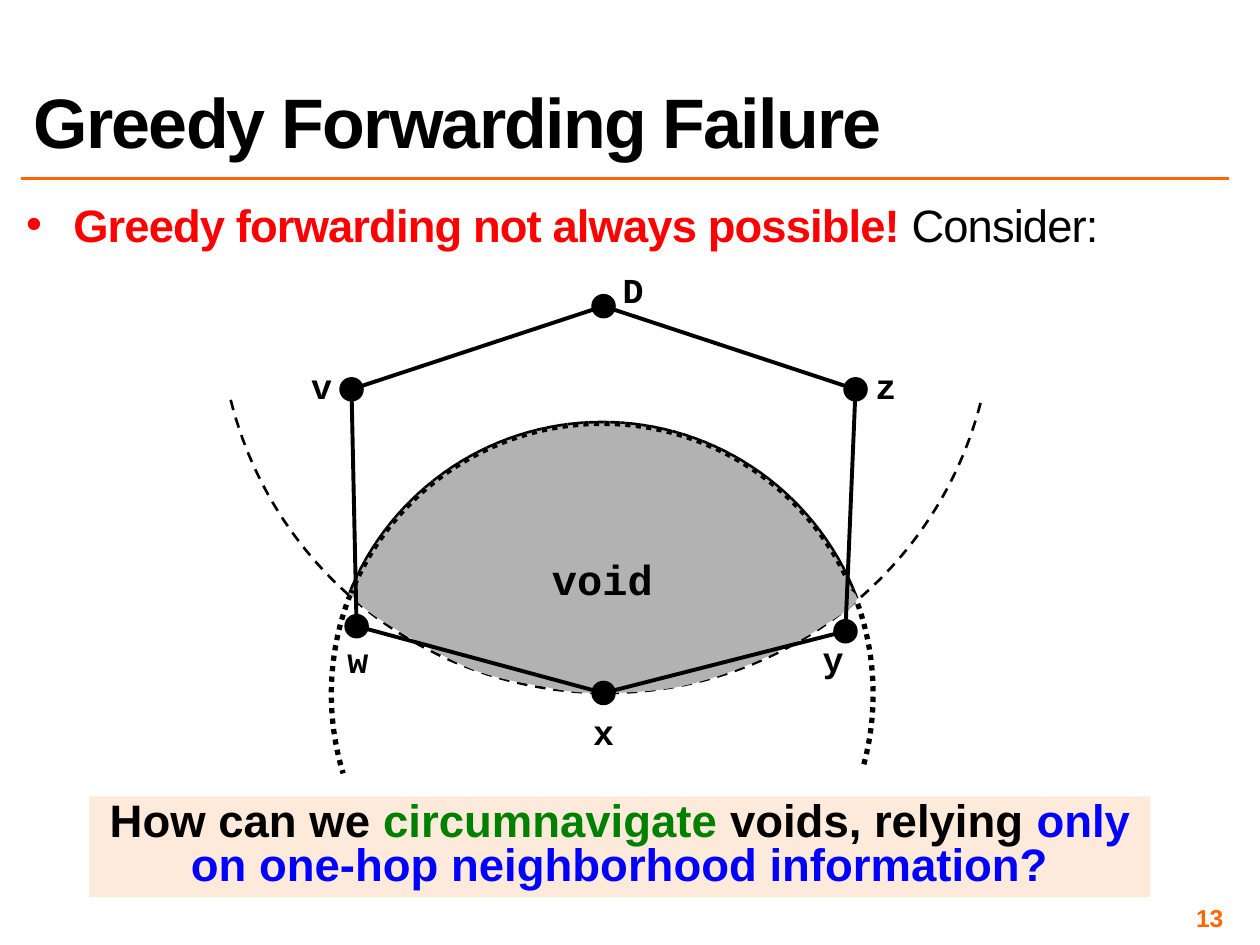
from math import cos, radians, sin, tan

from lxml.etree import SubElement
from pptx import Presentation
from pptx.dml.color import RGBColor
from pptx.enum.dml import MSO_LINE
from pptx.enum.shapes import MSO_CONNECTOR, MSO_SHAPE
from pptx.enum.text import MSO_ANCHOR, MSO_AUTO_SIZE, PP_ALIGN
from pptx.oxml.ns import qn
from pptx.util import Inches, Pt

COLORS = {"ink": "000000", "accent": "FF6600", "alert": "FF0000", "void": "B2B2B2",
          "panel": "FDEADA", "green": "008000", "blue": "0000FF"}

WIDTH, HEIGHT = 10, 7.5
MARGIN = WIDTH / 60
RIGHT_EDGE = WIDTH - 0.25
RULE_TOP = 17 / 12
NODE_SIZE = MARGIN

TITLE = [("Greedy Forwarding Failure", "ink", True)]
CLAIM = [("Greedy forwarding not always possible! ", "alert", True), ("Consider:", "ink", False)]
QUESTION = [("How can we ", "ink", True), ("circumnavigate", "green", True),
            (" voids, relying ", "ink", True),
            ("only on one-hop neighborhood information?", "blue", True)]
PAGE = [("13", "accent", True)]

NODES = {
    "D": ((4.79, 2.43), (4.83, 2.08, 0.39)),
    "v": ((2.79, 3.09), (2.37, 2.84, 0.35)),
    "z": ((6.79, 3.09), (6.85, 2.84, 0.33)),
    "w": ((2.83, 4.97), (2.63, 5.02, 0.42)),
    "y": ((6.71, 5.01), (6.43, 5.01, 0.35)),
    "x": ((4.79, 5.5), (4.61, 5.59, 0.35)),
}
EDGES = ["Dz", "vD", "xw", "yx", "zy", "vw"]

DESTINATION_RANGE = ((4.81, 2.43), 3.07)
RADIO_RANGE = ((4.78, 5.51), 2.15)
LOWER_VOID = [
    (2.76, 4.7), (2.83, 4.77), (2.9, 4.85), (3.07, 4.95), (3.23, 5.05), (3.53, 5.22),
    (3.74, 5.31), (3.95, 5.39), (4.14, 5.42), (4.32, 5.45), (4.49, 5.49), (4.6, 5.5),
    (4.78, 5.5), (4.96, 5.5), (5.19, 5.49), (5.39, 5.45), (5.59, 5.41), (5.79, 5.34),
    (5.98, 5.26), (6.17, 5.18), (6.4, 5.06), (6.53, 4.97), (6.67, 4.88), (6.85, 4.78),
    (6.79, 4.72), (6.73, 4.65), (6.51, 4.47), (6.18, 4.57), (5.84, 4.67), (5.07, 5.17),
    (4.78, 5.33), (4.78, 5.33), (2.76, 4.7), (2.76, 4.7)]

FRAME = {"word_wrap": True, "auto_size": MSO_AUTO_SIZE.NONE, "vertical_anchor": MSO_ANCHOR.TOP}
GROW = {"auto_size": MSO_AUTO_SIZE.SHAPE_TO_FIT_TEXT}
NARROW = {f"margin_{side}": Inches(0.04) for side in ("left", "right", "top", "bottom")}


def assign(target, values):
    for key, value in values.items():
        setattr(target, key, value)


def rgb(color):
    return RGBColor.from_string(COLORS[color])


def box(left, top, width, height):
    return [Inches(length) for length in (left, top, width, height)]


def write(shape, runs, size, font="Arial", frame=None, spacing=0, **paragraph_format):
    text = shape.text_frame
    assign(text, {**FRAME, **(frame or {})})
    paragraph = text.paragraphs[0]
    assign(paragraph, {"alignment": PP_ALIGN.CENTER, "space_before": Pt(0), **paragraph_format})
    for words, color, bold in runs:
        run = paragraph.add_run()
        run.text = words
        assign(run.font, {"name": font, "size": Pt(size), "bold": bold})
        run.font.color.rgb = rgb(color)
        if spacing:
            run.font._element.set("spc", str(int(spacing * 100)))
    return paragraph


def paint(shape, fill=None, line=None, width=1, dash=None):
    shape.shadow.inherit = False
    if fill:
        shape.fill.solid()
        shape.fill.fore_color.rgb = rgb(fill)
    else:
        shape.fill.background()
    if line:
        shape.line.color.rgb = rgb(line)
        assign(shape.line, {"width": Pt(width), "dash_style": dash})
    else:
        shape.line.fill.background()
    return shape


def connect(shapes, start, end, color, width):
    ends = [Inches(value) for value in (*start, *end)]
    connector = shapes.add_connector(MSO_CONNECTOR.STRAIGHT, *ends)
    connector.line.color.rgb = rgb(color)
    connector.line.width = Pt(width)
    SubElement(connector._element.spPr, qn("a:effectLst"))


def arc(circle, stops):
    (x, y), radius = circle
    points = []
    for first, last in zip(stops, stops[1:]):
        start, end = radians(first), radians(last)
        reach = 4 / 3 * tan((end - start) / 4)
        curve = [(cos(start), sin(start)),
                 (cos(start) - reach * sin(start), sin(start) + reach * cos(start)),
                 (cos(end) + reach * sin(end), sin(end) - reach * cos(end)),
                 (cos(end), sin(end))]
        points += curve[1:] if points else curve
    return [(x + radius * across, y + radius * down) for across, down in points]


def add_curve(shapes, curve, center=None, **look):
    vertices = [(Inches(x), Inches(y)) for x, y in curve + ([center] if center else [])]
    builder = shapes.build_freeform(*vertices[0], scale=1.0)
    builder.add_line_segments(vertices[1:], close=False)
    shape = builder.convert_to_shape()
    local = [(str(x - shape.left), str(y - shape.top)) for x, y in vertices]
    curved = local[:len(curve)]
    segments = [("a:moveTo", curved[:1])]
    segments += [("a:cubicBezTo", curved[i:i + 3]) for i in range(1, len(curved), 3)]
    closing = [("a:lnTo", local[-1:])] if center else []
    closing.append(("a:close", []))
    outlines = [({"stroke": "0"} if center else {}, segments + closing)]
    if center:
        outlines.insert(0, ({"fill": "none"}, segments))
    path_list = shape._element.spPr.find(".//" + qn("a:pathLst"))
    path_list.remove(path_list[0])
    for options, commands in outlines:
        size = {"w": str(shape.width), "h": str(shape.height)}
        outline = SubElement(path_list, qn("a:path"), {**size, **options})
        for tag, points in commands:
            command = SubElement(outline, qn(tag))
            for x, y in points:
                SubElement(command, qn("a:pt"), x=x, y=y)
    return paint(shape, **look)


def add_headings(shapes):
    connect(shapes, (MARGIN, RULE_TOP), (RIGHT_EDGE, RULE_TOP), "accent", 2)
    title, body = shapes.title, shapes.placeholders[1]
    areas = [(title, box(MARGIN, MARGIN, RIGHT_EDGE - MARGIN, 7 * MARGIN)),
             (body, box(MARGIN, 1.61, 9, 0.63))]
    for holder, area in areas:
        assign(holder, dict(zip(("left", "top", "width", "height"), area)))
    write(title, TITLE, 40, frame={"vertical_anchor": MSO_ANCHOR.BOTTOM}, spacing=-1,
          alignment=PP_ALIGN.LEFT, line_spacing=0.8)
    claim = write(body, CLAIM, 25.9, frame=NARROW, spacing=-0.5,
                  alignment=PP_ALIGN.LEFT, line_spacing=0.8)
    properties = claim._p.get_or_add_pPr()
    indent = Inches(3 / 8)
    properties.set("marL", str(indent))
    properties.set("indent", str(-indent))
    bullet_color = SubElement(properties, qn("a:buClr"))
    SubElement(bullet_color, qn("a:srgbClr"), val=COLORS["alert"])
    SubElement(properties, qn("a:buFont"), typeface="Arial")
    SubElement(properties, qn("a:buChar"), char="•")


def add_void(shapes):
    dots = {"line": "ink", "width": 3, "dash": MSO_LINE.ROUND_DOT}
    destination, radio = DESTINATION_RANGE[0], RADIO_RANGE[0]
    add_curve(shapes, arc(DESTINATION_RANGE, [14.5, 90, 166]), destination,
              line="ink", width=1.5, dash=MSO_LINE.DASH)
    add_curve(shapes, arc(RADIO_RANGE, [15, 0, -90, -180, -197]), radio, **dots)
    add_curve(shapes, arc(RADIO_RANGE, [-21.7, -90, -158.3]), radio, fill="void", **dots)
    add_curve(shapes, LOWER_VOID, fill="void")
    name = paint(shapes.add_shape(MSO_SHAPE.RECTANGLE, *box(4.12, 4.34, 1.32, 0.5)), fill="void")
    write(name, [("void", "ink", True)], 24, "Courier New", GROW)


def add_network(shapes):
    for start, end in EDGES:
        connect(shapes, NODES[start][0], NODES[end][0], "ink", 2.25)
    for name, ((x, y), (left, top, width)) in NODES.items():
        area = box(x - NODE_SIZE / 2, y - NODE_SIZE / 2, NODE_SIZE, NODE_SIZE)
        paint(shapes.add_shape(MSO_SHAPE.OVAL, *area), fill="ink", line="ink", width=2)
        label = shapes.add_textbox(*box(left, top, width, 0.4))
        write(label, [(name, "ink", True)], 20, "Courier New", {**GROW, "word_wrap": False})


def add_footer(shapes):
    panel = paint(shapes.add_shape(MSO_SHAPE.RECTANGLE, *box(0.71, 6.32, 8.42, 0.8)), fill="panel")
    write(panel, QUESTION, 26, frame=GROW, line_spacing=0.8)
    page = shapes.add_textbox(*box(RIGHT_EDGE - 2.33, 7.17, 2.33, 0.23))
    write(page, PAGE, 14, frame={**NARROW, "vertical_anchor": MSO_ANCHOR.MIDDLE},
          alignment=PP_ALIGN.RIGHT)


def main():
    deck = Presentation()
    assign(deck, {"slide_width": Inches(WIDTH), "slide_height": Inches(HEIGHT)})
    shapes = deck.slides.add_slide(deck.slide_layouts[1]).shapes
    for add_part in (add_headings, add_void, add_network, add_footer):
        add_part(shapes)
    deck.save("out.pptx")


if __name__ == "__main__":
    main()
